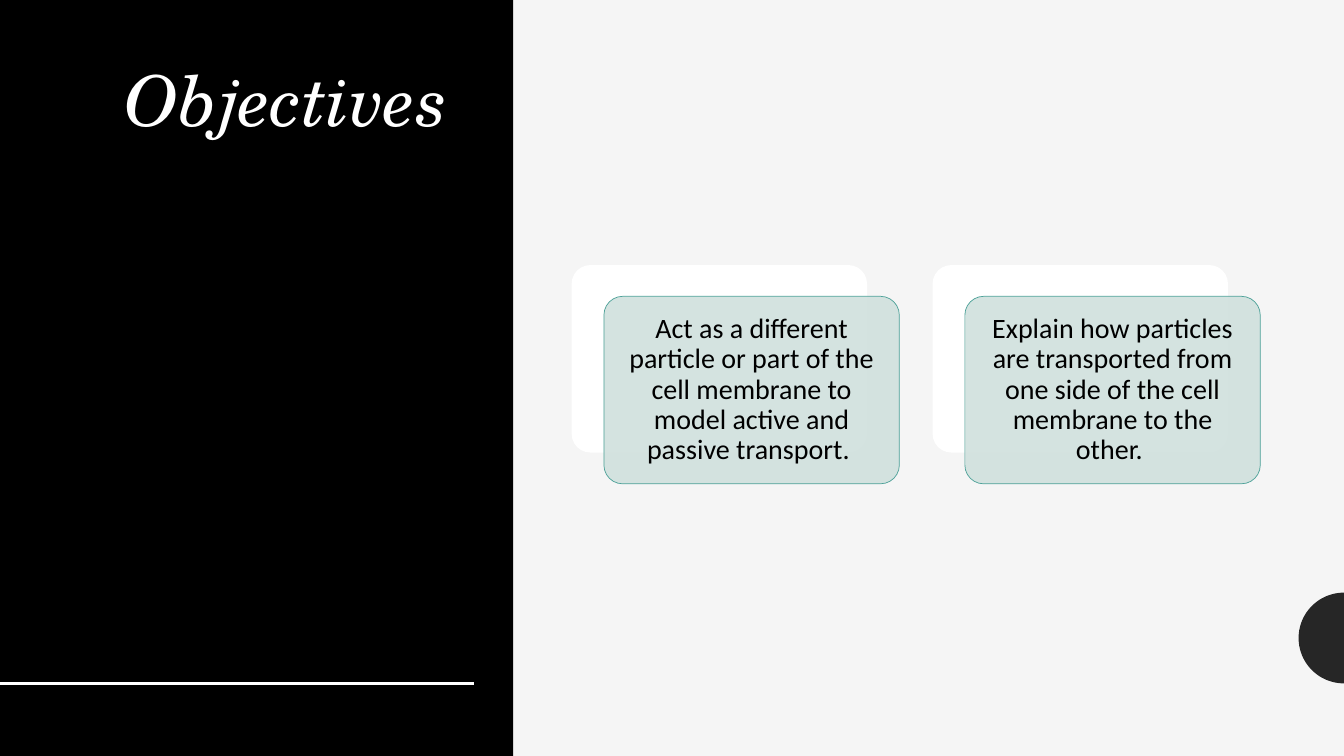
import math
from lxml import etree
from pptx import Presentation
from pptx import util as u
from pptx.dml.color import RGBColor
from pptx.enum import shapes, text
from pptx.oxml.ns import qn

BLACK = RGBColor(0x00, 0x00, 0x00)
WHITE = RGBColor(0xFF, 0xFF, 0xFF)
PAPER = RGBColor(0xF5, 0xF5, 0xF5)
DARK = RGBColor(0x26, 0x26, 0x26)
MINT = RGBColor(0xD0, 0xE0, 0xDD)
TEAL = RGBColor(0x4C, 0xA1, 0x98)

GOALS = [
    "Act as a different particle or part of the cell membrane to "
    "model active and passive transport. ",
    "Explain how particles are transported from one side of the cell "
    "membrane to the other. ",
]


def paint(shape, color):
    shape.shadow.inherit = False
    shape.fill.solid()
    shape.fill.fore_color.rgb = color
    shape.line.fill.background()


def add_box(kind, left, top, width, height, color):
    box = slide.shapes.add_shape(kind, u.Inches(left), u.Inches(top),
                                 u.Inches(width), u.Inches(height))
    paint(box, color)
    return box


prs = Presentation()
prs.slide_width, prs.slide_height = u.Inches(13.33), u.Inches(7.5)
slide = prs.slides.add_slide(prs.slide_layouts[5])
slide.background.fill.solid()
slide.background.fill.fore_color.rgb = PAPER

# Half disc on the right edge
mid_x, mid_y, radius = 13.33, 6.33, 0.45
arc = [(u.Inches(mid_x - radius * math.sin(math.radians(deg))),
        u.Inches(mid_y - radius * math.cos(math.radians(deg))))
       for deg in range(0, 181, 4)]
pen = slide.shapes.build_freeform(*arc[0])
pen.add_line_segments(arc[1:], close=True)
paint(pen.convert_to_shape(), DARK)

# Black side panel with its rule
add_box(shapes.MSO_SHAPE.RECTANGLE, 0, 0, 5.09, 7.5, BLACK)
rule = slide.shapes.add_connector(shapes.MSO_CONNECTOR.STRAIGHT, 0,
                                  u.Inches(6.78), u.Inches(4.7), u.Inches(6.78))
rule.line.color.rgb = WHITE
rule.line.width = u.Pt(2)
etree.SubElement(rule._element.spPr, qn("a:effectLst"))

# Title, brought in front of the panel
title = slide.shapes.title
slide.shapes._spTree.append(title._element)
title.left, title.top = u.Inches(0.83), u.Inches(0.61)
title.width, title.height = u.Inches(3.9), u.Inches(5.42)
frame = title.text_frame
frame.text = "Objectives "
frame.word_wrap = True
frame.auto_size = text.MSO_AUTO_SIZE.NONE
frame.vertical_anchor = text.MSO_ANCHOR.TOP
para = frame.paragraphs[0]
para.alignment = text.PP_ALIGN.RIGHT
para.line_spacing = 0.9
para.font.name = "TeX Gyre Schola"
para.font.size = u.Pt(50)
para.font.italic = True
para.font.color.rgb = WHITE

# Objective cards, each over a white backing
for i, goal in enumerate(GOALS):
    left = 5.67 + 3.58 * i
    back = add_box(shapes.MSO_SHAPE.ROUNDED_RECTANGLE,
                   left, 2.63, 2.93, 1.86, WHITE)
    card = add_box(shapes.MSO_SHAPE.ROUNDED_RECTANGLE,
                   left + 0.32, 2.94, 2.93, 1.86, MINT)
    back.adjustments[0] = card.adjustments[0] = 0.1
    tint = card._element.spPr.find(qn("a:solidFill"))[0]
    etree.SubElement(tint, qn("a:alpha"), val="90000")
    card.line.color.rgb = TEAL
    card.line.width = u.Pt(0.5)

    frame = card.text_frame
    frame.text = goal
    frame.word_wrap = True
    frame.vertical_anchor = text.MSO_ANCHOR.MIDDLE
    frame.margin_left = frame.margin_right = u.Inches(0.08)
    frame.margin_top = frame.margin_bottom = u.Inches(0.08)
    para = frame.paragraphs[0]
    para.alignment = text.PP_ALIGN.CENTER
    para.line_spacing = 0.9
    para.font.name = "Calibri"
    para.font.size = u.Pt(20)
    para.font.color.rgb = BLACK

prs.save("out.pptx")
